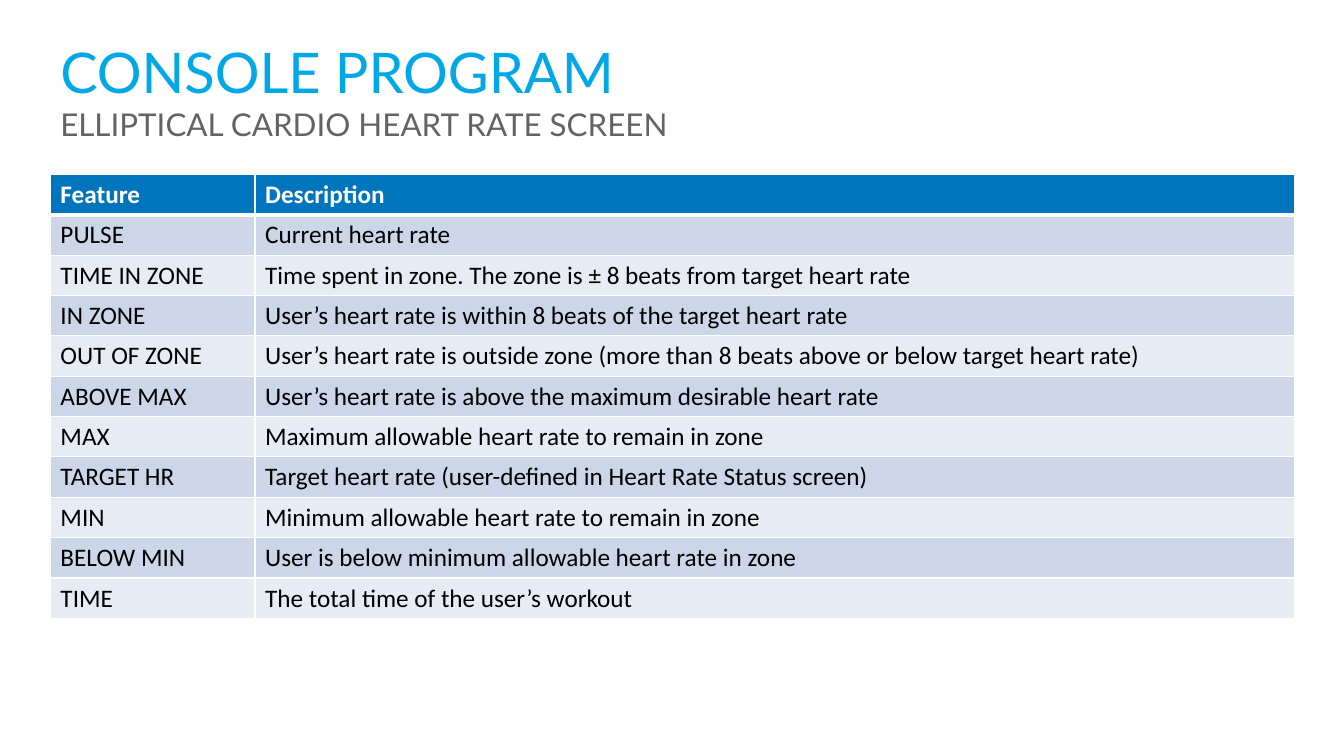
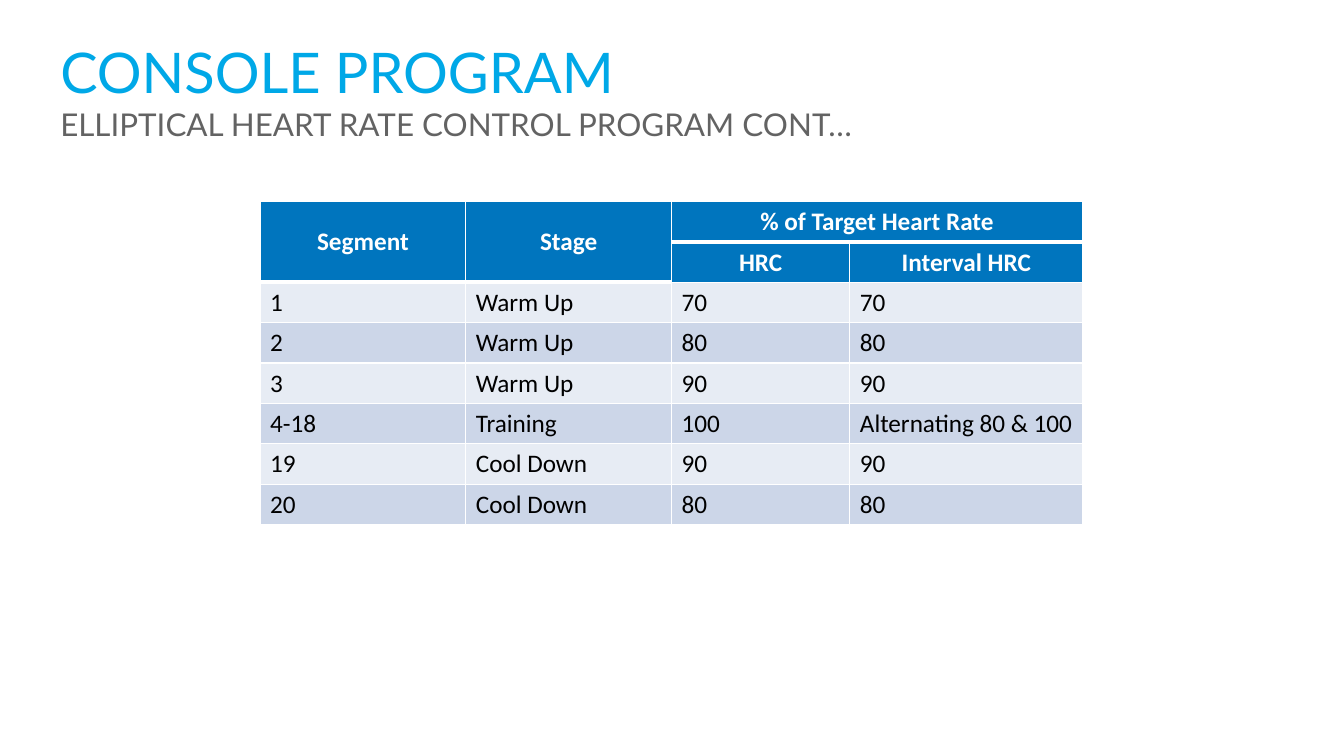
from lxml import etree
from pptx import Presentation
from pptx.dml.color import RGBColor
from pptx.enum.text import MSO_ANCHOR, PP_ALIGN
from pptx.oxml.ns import qn
from pptx.util import Inches, Pt

MIDDLE = MSO_ANCHOR.MIDDLE
LEFT, CENTER = PP_ALIGN.LEFT, PP_ALIGN.CENTER
SKY, GRAY, BLUE = "00A8E7", "636363", "0075BE"
WHITE, BLACK = "FFFFFF", "000000"
BANDS = ("E7ECF4", "CCD6E8")
ROW = 0.4

SCREEN = [
    ("Feature", "Description"),
    ("PULSE", "Current heart rate"),
    ("TIME IN ZONE", "Time spent in zone. The zone is ± 8 beats from target heart rate"),
    ("IN ZONE", "User’s heart rate is within 8 beats of the target heart rate"),
    ("OUT OF ZONE", "User’s heart rate is outside zone (more than 8 beats above or below target heart rate)"),
    ("ABOVE MAX", "User’s heart rate is above the maximum desirable heart rate"),
    ("MAX", "Maximum allowable heart rate to remain in zone"),
    ("TARGET HR", "Target heart rate (user-defined in Heart Rate Status screen)"),
    ("MIN", "Minimum allowable heart rate to remain in zone"),
    ("BELOW MIN", "User is below minimum allowable heart rate in zone"),
    ("TIME", "The total time of the user’s workout"),
]
STAGES = [
    ("Segment", "Stage", "% of Target Heart Rate", ""),
    ("", "", "HRC", "Interval HRC"),
    ("1", "Warm Up", "70", "70"),
    ("2", "Warm Up", "80", "80"),
    ("3", "Warm Up", "90", "90"),
    ("4-18", "Training", "100", "Alternating 80 & 100"),
    ("19", "Cool Down", "90", "90"),
    ("20", "Cool Down", "80", "80"),
]
SPANS = [(0, 0, 1, 0), (0, 1, 1, 1), (0, 2, 0, 3)]


def paint(item, color):
    item.rgb = RGBColor.from_string(color)


def add_title(slide, left, top, width, height, name):
    box = slide.shapes.add_textbox(Inches(left), Inches(top), Inches(width), Inches(height))
    frame = box.text_frame
    frame.word_wrap = True
    frame.vertical_anchor = MIDDLE
    para = frame.paragraphs[0]
    para.font.name = "Lato"
    for text, size, color in (("CONSOLE PROGRAM", 40, SKY), (name, 22.4, GRAY)):
        if para.runs:
            para.add_line_break()
        run = para.add_run()
        run.text = text
        run.font.name = "Lato"
        run.font.size = Pt(size)
        paint(run.font.color, color)


def add_rules(cell, base):
    props = cell._tc.get_or_add_tcPr()
    for side, width in (("L", 1), ("R", 1), ("T", 1), ("B", base)):
        line = etree.SubElement(props, qn("a:ln" + side), w=str(Pt(width)))
        fill = etree.SubElement(line, qn("a:solidFill"))
        etree.SubElement(fill, qn("a:srgbClr"), val=WHITE)


def add_grid(slide, left, top, cols, rows, heads=1, align=LEFT, spans=()):
    table = slide.shapes.add_table(
        len(rows), len(cols), Inches(left), Inches(top),
        Inches(sum(cols)), Inches(ROW * len(rows))).table
    for col, width in zip(table.columns, cols):
        col.width = Inches(width)
    for r, texts in enumerate(rows):
        table.rows[r].height = Inches(ROW)
        head = r < heads
        for c, text in enumerate(texts):
            cell = table.cell(r, c)
            add_rules(cell, 1 if r else 3)
            cell.fill.solid()
            paint(cell.fill.fore_color, BLUE if head else BANDS[r % 2])
            cell.text = text
            para = cell.text_frame.paragraphs[0]
            font = para.font
            font.name, font.size, font.bold = "Calibri", Pt(18), head
            paint(font.color, WHITE if head else BLACK)
            if head:
                para.alignment = align
                cell.vertical_anchor = MIDDLE
    for r, c, end, last in spans:
        table.cell(r, c).merge(table.cell(end, last))


def add_page(deck, name):
    slide = deck.slides.add_slide(deck.slide_layouts[6])
    add_title(slide, 0.5, 0.3, 9.4, 1.19, name)
    return slide


def main():
    deck = Presentation()
    deck.slide_width, deck.slide_height = Inches(13.33), Inches(7.5)
    page = add_page(deck, "ELLIPTICAL CARDIO HEART RATE SCREEN")
    add_grid(page, 0.5, 1.73, (2.03, 10.31), SCREEN)
    page = add_page(deck, "ELLIPTICAL HEART RATE CONTROL PROGRAM CONT…")
    add_grid(page, 2.58, 2, (2.04, 2.04, 1.77, 2.31), STAGES, 2, CENTER, SPANS)
    deck.save("out.pptx")


if __name__ == "__main__":
    main()
